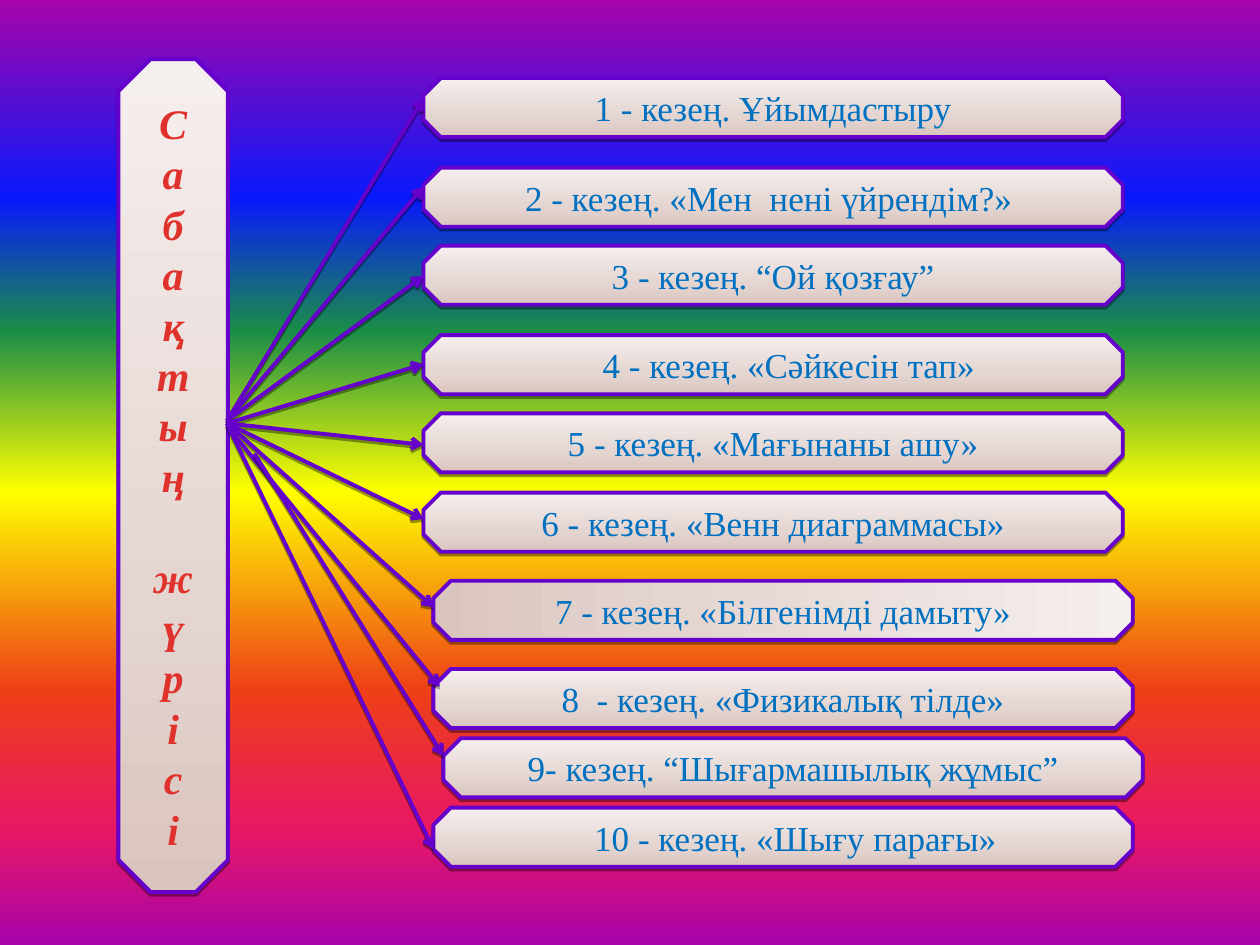
import pptx
import pptx.util
import pptx.dml.color
import pptx.enum.shapes
import pptx.enum.text
import pptx.oxml
import pptx.oxml.ns

Pt = pptx.util.Pt

TITLE = "Сабақтың жүрісі"
HUB = (129.6, 241.9)
HUB_HIGH = (129.6, 240.5)
# text, text shift, box left, box top, arrow start, arrow end
STAGES = [
    ("1 - кезең. Ұйымдастыру", 0, 242, 44.6, HUB_HIGH, (242, 56.2)),
    ("2 - кезең. «Мен  нені үйрендім?»", -2.5, 242, 95.8, HUB_HIGH, (242, 106.6)),
    ("3 - кезең. “Ой қозғау”", 0, 242, 140.4, HUB_HIGH, (242, 157.7)),
    ("4 - кезең. «Сәйкесін тап»", 9, 242, 191.5, HUB, (242, 208.1)),
    ("5 - кезең. «Мағынаны ашу»", 0, 242, 236.2, HUB, (242, 254.2)),
    ("6 - кезең. «Венн диаграммасы»", 0, 242, 281.5, HUB, (242, 296.6)),
    ("7 - кезең. «Білгенімді дамыту»", 0, 247.7, 331.9, HUB, (247.7, 347)),
    ("8  - кезең. «Физикалық тілде»", 0, 247.7, 382.3, (133.2, 247.7), (251.3, 392.4)),
    ("9- кезең. “Шығармашылық жұмыс”", 0, 253.4, 421.9, (145.4, 259.2), (253.4, 432)),
    ("10 - кезең. «Шығу парағы»", 7, 247.7, 461.5, HUB, (247.7, 485.3)),
]
SIDEWAYS_STAGE = 7
BOX_WIDTH, BOX_HEIGHT = 399.6, 33.8
INSET = 7.2

RAINBOW = [(0, "A603AB"), (21, "0819FB"), (35, "1A8D48"), (52, "FFFF00"),
           (73, "EE3F17"), (88, "E81766"), (100, "A603AB")]
BEIGE = [(0, "DAC4BE"), (35, "E4D5D1"), (100, "F5EFED")]
PURPLE, BLUE, RED = "6600CC", "0070C0", "E0322D"
NS = pptx.oxml.ns.nsdecls("a")


def rgb(code):
    return pptx.dml.color.RGBColor.from_string(code)


def paint_gradient(holder, stops, angle):
    """Swap the solid fill of an element for a linear gradient."""
    marks = "".join(f'<a:gs pos="{pos * 1000}"><a:srgbClr val="{code}"/></a:gs>'
                    for pos, code in stops)
    gradient = pptx.oxml.parse_xml(
        f'<a:gradFill {NS} rotWithShape="1"><a:gsLst>{marks}</a:gsLst>'
        f'<a:lin ang="{angle * 60000}" scaled="0"/></a:gradFill>')
    solid = holder.find(pptx.oxml.ns.qn("a:solidFill"))
    holder.replace(solid, gradient)


def outline(item):
    """Give a shape or connector its purple line and soft drop shadow."""
    item.line.color.rgb = rgb(PURPLE)
    item.line.width = Pt(2.25)
    properties = item._element.spPr
    for old in properties.findall(pptx.oxml.ns.qn("a:effectLst")):
        properties.remove(old)
    properties.append(pptx.oxml.parse_xml(
        f'<a:effectLst {NS}><a:outerShdw blurRad="0" dist="{Pt(1.6)}" dir="5400000" '
        'rotWithShape="0"><a:srgbClr val="000000"><a:alpha val="38000"/></a:srgbClr>'
        '</a:outerShdw></a:effectLst>'))


def add_plaque(slide, text, left, top, width, height, size, color, angle=270):
    plaque = slide.shapes.add_shape(pptx.enum.shapes.MSO_SHAPE.OCTAGON,
                                    Pt(left), Pt(top), Pt(width), Pt(height))
    plaque.adjustments[0] = 0.293
    plaque.fill.solid()
    paint_gradient(plaque._element.spPr, BEIGE, angle)
    outline(plaque)
    frame = plaque.text_frame
    frame.text = text
    frame.word_wrap = False
    frame.vertical_anchor = pptx.enum.text.MSO_ANCHOR.MIDDLE
    line = frame.paragraphs[0]
    line.alignment = pptx.enum.text.PP_ALIGN.CENTER
    font = line.runs[0].font
    font.name = "Times New Roman"
    font.size = Pt(size)
    font.color.rgb = rgb(color)
    return frame


def add_arrow(slide, start, end):
    arrow = slide.shapes.add_connector(pptx.enum.shapes.MSO_CONNECTOR.STRAIGHT,
                                       *(Pt(v) for v in start + end))
    outline(arrow)
    arrow.line._get_or_add_ln().append(
        pptx.oxml.parse_xml(f'<a:tailEnd {NS} type="arrow"/>'))


def main():
    deck = pptx.Presentation()
    deck.slide_width, deck.slide_height = Pt(720), Pt(540)
    slide = deck.slides.add_slide(deck.slide_layouts[6])

    # Rainbow background
    slide.background.fill.solid()
    paint_gradient(slide.element.xpath("./p:cSld/p:bg/p:bgPr")[0], RAINBOW, 90)

    # Title pillar with stacked letters
    title = add_plaque(slide, TITLE, 67.7, 33.8, 62.6, 475.9, 24, RED)
    title._txBody.bodyPr.set("vert", "wordArtVert")
    title_run = title.paragraphs[0].runs[0]
    title_run.font.bold = title_run.font.italic = True
    title_run.font._element.set("spc", "50")

    # Stage boxes
    for number, (text, shift, left, top, _, _) in enumerate(STAGES, 1):
        angle = 0 if number == SIDEWAYS_STAGE else 270
        stage = add_plaque(slide, text, left, top, BOX_WIDTH, BOX_HEIGHT, 20, BLUE, angle)
        stage.margin_left = Pt(INSET + shift)
        stage.margin_right = Pt(INSET - shift)

    # Arrows from the pillar to each stage
    for *_, start, end in STAGES:
        add_arrow(slide, start, end)

    deck.save("out.pptx")


if __name__ == "__main__":
    main()
